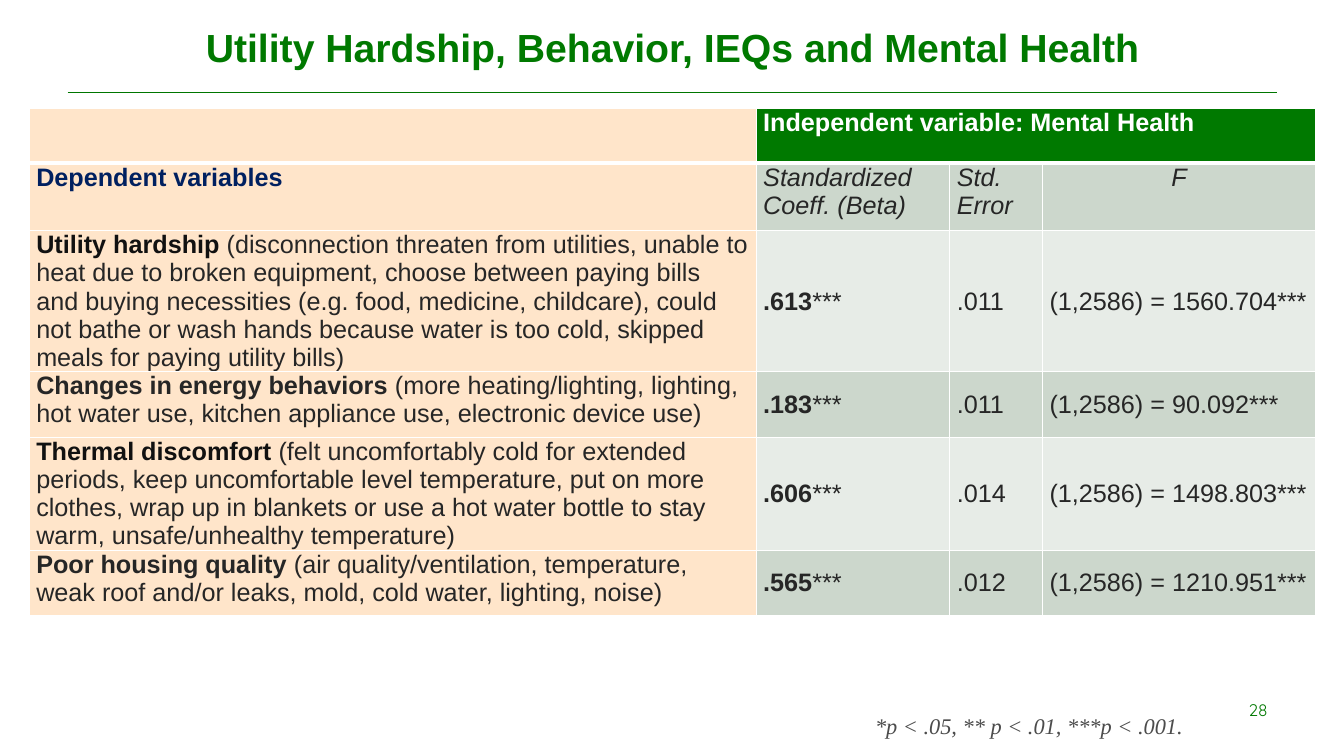
from lxml import etree
from pptx import Presentation
from pptx import util as u
from pptx.dml.color import RGBColor
from pptx.enum import shapes, text
from pptx.oxml import ns

COLORS = {
    "green": "007900", "rule": "007600", "white": "FFFFFF", "navy": "002060",
    "dark": "262626", "black": "111111", "gray": "4C4C4C",
    "peach": "FFE5CA", "band": "CCD7CC", "light": "E7ECE7",
}


def add_run(paragraph, words, color, size=18, name="Arial", **format_values):
    run = paragraph.add_run()
    run.text = words
    values = {"size": u.Pt(size), "name": name, "bold": False, "italic": False}
    for key, value in {**values, **format_values}.items():
        setattr(run.font, key, value)
    run.font.color.rgb = RGBColor.from_string(COLORS[color])


def style_cell(cell, fill, bottom_width):
    properties = cell._tc.get_or_add_tcPr()
    for side, width in (("L", 1), ("R", 1), ("T", 1), ("B", bottom_width)):
        border = etree.SubElement(properties, ns.qn("a:ln" + side), w=str(int(u.Pt(width))))
        solid = etree.SubElement(border, ns.qn("a:solidFill"))
        etree.SubElement(solid, ns.qn("a:srgbClr"), val=COLORS["white"])
    cell.fill.solid()
    cell.fill.fore_color.rgb = RGBColor.from_string(COLORS[fill])
    cell.margin_left = cell.margin_right = u.Inches(0.07)
    cell.margin_top = cell.margin_bottom = 0


presentation = Presentation()
presentation.slide_width = u.Inches(13.33)
presentation.slide_height = u.Inches(7.5)
slide = presentation.slides.add_slide(presentation.slide_layouts[5])

# Title and the rule below it
title = slide.shapes.title
title.left, title.top, title.width, title.height = map(u.Inches, (0.67, 0, 12, 0.92))
title.text_frame.vertical_anchor = text.MSO_ANCHOR.MIDDLE
paragraph = title.text_frame.paragraphs[0]
paragraph.alignment = text.PP_ALIGN.CENTER
add_run(paragraph, "Utility Hardship, Behavior, IEQs and Mental Health", "green", 28, bold=True)

rule = slide.shapes.add_connector(
    shapes.MSO_CONNECTOR.STRAIGHT, *map(u.Inches, (0.67, 0.92, 12.67, 0.92)))
rule.line.width = u.Pt(0.75)
rule.line.color.rgb = RGBColor.from_string(COLORS["rule"])
etree.SubElement(rule._element.spPr, ns.qn("a:effectLst"))

# Regression table
results = [
    ("Utility hardship ", "(disconnection threaten from utilities, unable to heat due to broken "
     "equipment, choose between paying bills and buying necessities (e.g. food, medicine, "
     "childcare), could not bathe or wash hands because water is too cold, skipped meals for "
     "paying utility bills)", ".613", ".011", "1560.704"),
    ("Changes in energy behaviors ", "(more heating/lighting, lighting, hot water use, kitchen "
     "appliance use, electronic device use)", ".183", ".011", "90.092"),
    ("Thermal discomfort ", "(felt uncomfortably cold for extended periods, keep uncomfortable "
     "level temperature, put on more clothes, wrap up in blankets or use a hot water bottle to "
     "stay warm, unsafe/unhealthy temperature)", ".606", ".014", "1498.803"),
    ("Poor housing quality ", "(air quality/ventilation, temperature, weak roof and/or leaks, "
     "mold, cold water, lighting, noise)", ".565", ".012", "1210.951"),
]
column_widths = (7.21, 1.92, 0.92, 2.71)
row_heights = (0.54, 0.67, 0.74, 0.65, 0.98, 0.65)
frame = slide.shapes.add_table(6, 4, *map(u.Inches, (0.29, 1.08, 12.76, 5.21)))
table = frame.table
table.first_row = table.horz_banding = False
for column, width in zip(table.columns, column_widths):
    column.width = u.Inches(width)
for row, height in zip(table.rows, row_heights):
    row.height = u.Inches(height)
frame.height = u.Inches(5.21)

for row_index, row in enumerate(table.rows):
    row_fill = "green" if row_index == 0 else ("light", "band")[row_index % 2]
    for column_index, cell in enumerate(row.cells):
        fill = "peach" if column_index == 0 else row_fill
        style_cell(cell, fill, 3 if row_index == 0 else 1)

# Header rows
table.cell(0, 1).merge(table.cell(0, 3))
add_run(table.cell(0, 1).text_frame.paragraphs[0],
        "Independent variable: Mental Health", "white", bold=True)
add_run(table.cell(1, 0).text_frame.paragraphs[0], "Dependent variables", "navy", bold=True)
for column_index, heading in enumerate(("Standardized Coeff. (Beta)", "Std. Error", "F"), 1):
    add_run(table.cell(1, column_index).text_frame.paragraphs[0], heading, "dark", italic=True)
table.cell(1, 3).text_frame.paragraphs[0].alignment = text.PP_ALIGN.CENTER

# Result rows
for row_index, (variable, details, beta, error, f_value) in enumerate(results, 2):
    name_color = "dark" if row_index % 2 else "black"
    row_runs = (
        ((variable, name_color, True), (details, "dark", False)),
        ((beta, "dark", True), ("***", "dark", False)),
        ((error, "dark", False),),
        ((f"(1,2586) = {f_value}***", "dark", False),),
    )
    for column_index, runs in enumerate(row_runs):
        cell = table.cell(row_index, column_index)
        if column_index:
            cell.vertical_anchor = text.MSO_ANCHOR.MIDDLE
        for words, color, bold in runs:
            add_run(cell.text_frame.paragraphs[0], words, color, bold=bold)

# Page number and significance note
footers = [
    ((2.92, 6.89, 9.75, 0.53), text.PP_ALIGN.RIGHT, "28", "green",
     {"size": 12, "name": "Quicksand"}),
    ((8.58, 7.02, 3.42, 0.37), text.PP_ALIGN.JUSTIFY, "*p < .05, ** p < .01, ***p < .001.",
     "gray", {"size": 16, "name": "Times New Roman", "italic": True}),
]
for place, alignment, words, color, format_values in footers:
    box = slide.shapes.add_textbox(*map(u.Inches, place))
    box.text_frame.word_wrap = True
    paragraph = box.text_frame.paragraphs[0]
    paragraph.alignment = alignment
    add_run(paragraph, words, color, **format_values)

presentation.save("out.pptx")
